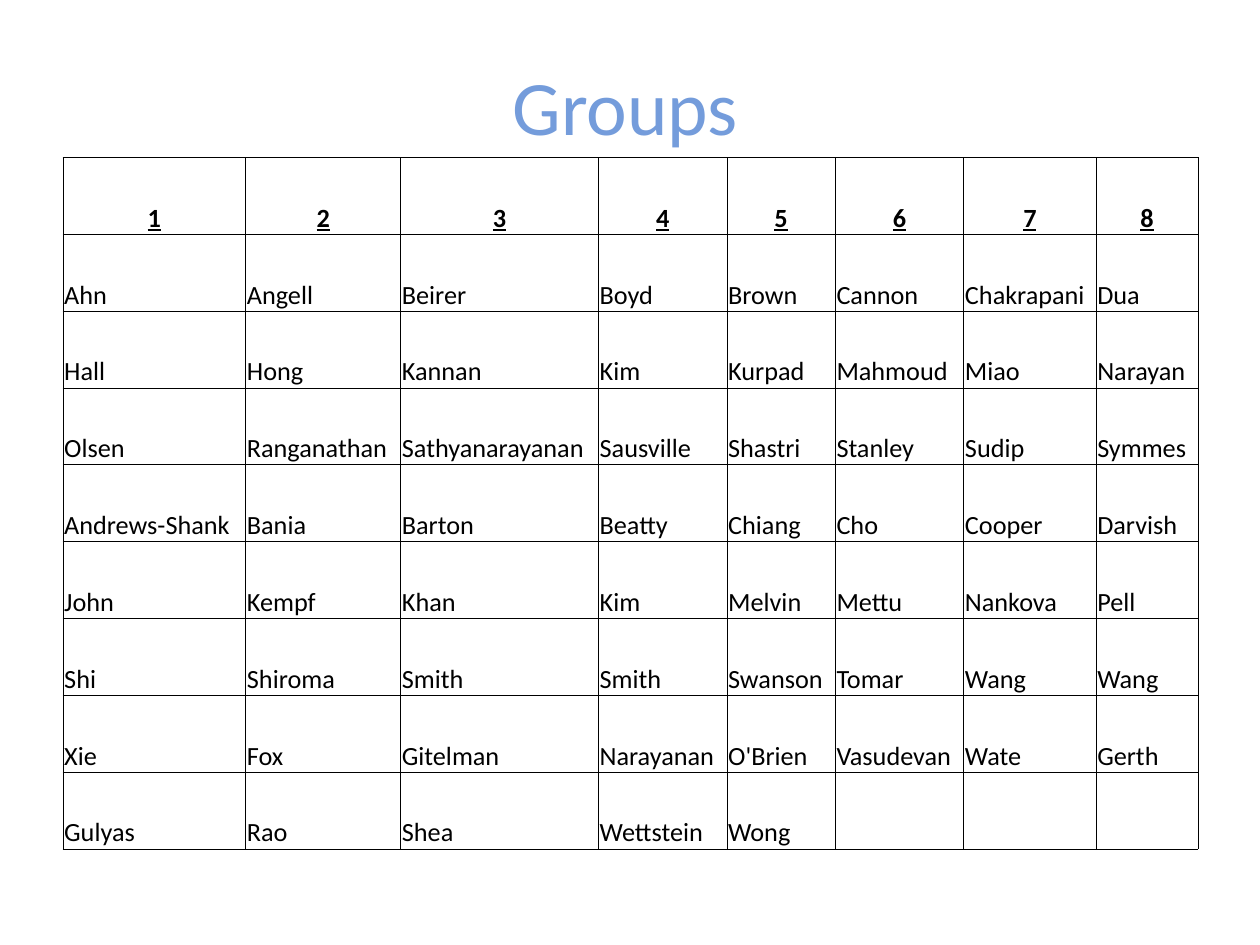
from lxml.etree import SubElement as Sub
from pptx import Presentation as Deck
from pptx.dml.color import RGBColor as RGB
from pptx.enum.text import MSO_ANCHOR as Anchor, PP_ALIGN as Align
from pptx.oxml.ns import qn
from pptx.util import Inches, Pt

HUES = {"title": "749CDB", "ink": "000000", "paper": "FFFFFF"}
WIDTHS = [1.45, 1.23, 1.57, 1.02, 0.86, 1.02, 1.05, 0.81]
HEIGHT = 0.61
FILLED = 12
NAMES = """1 2 3 4 5 6 7 8
Ahn Angell Beirer Boyd Brown Cannon Chakrapani Dua
Hall Hong Kannan Kim Kurpad Mahmoud Miao Narayan
Olsen Ranganathan Sathyanarayanan Sausville Shastri Stanley Sudip Symmes
Andrews-Shank Bania Barton Beatty Chiang Cho Cooper Darvish
John Kempf Khan Kim Melvin Mettu Nankova Pell
Shi Shiroma Smith Smith Swanson Tomar Wang Wang
Xie Fox Gitelman Narayanan O'Brien Vasudevan Wate Gerth
Gulyas Rao Shea Wettstein Wong"""


def write(frame, text, size, hue, font="Calibri", align=Align.LEFT, bold=False, line=False):
    para = frame.paragraphs[0]
    para.alignment = align
    run = para.add_run()
    run.text = text
    run.font.name = font
    run.font.size = Pt(size)
    run.font.bold = bold
    run.font.underline = line
    run.font.color.rgb = RGB.from_string(HUES[hue])


class Page:
    def __init__(self, slide, font="Calibri"):
        self.slide = slide
        self.font = font

    def title(self, text, left, top, width, height):
        box = self.slide.shapes.add_textbox(
            Inches(left), Inches(top), Inches(width), Inches(height))
        frame = box.text_frame
        frame.word_wrap = True
        frame.vertical_anchor = Anchor.MIDDLE
        frame.margin_left = Inches(0.63)
        write(frame, text, 44, "title", self.font, Align.CENTER)

    def border(self, cell):
        props = cell._tc.get_or_add_tcPr()
        for side in ("lnL", "lnR", "lnT", "lnB"):
            edge = Sub(props, qn(f"a:{side}"), w=str(Pt(0.5)))
            fill = Sub(edge, qn("a:solidFill"))
            Sub(fill, qn("a:srgbClr"), val=HUES["ink"])

    def cell(self, cell, text, head, filled):
        cell.vertical_anchor = Anchor.BOTTOM
        cell.margin_left = cell.margin_right = cell.margin_top = Inches(0.01)
        cell.margin_bottom = 0
        self.border(cell)
        if filled:
            cell.fill.solid()
            cell.fill.fore_color.rgb = RGB.from_string(HUES["paper"])
        else:
            cell.fill.background()
        if text:
            align = Align.CENTER if head else Align.LEFT
            write(cell.text_frame, text, 15, "ink", self.font, align, head, head)

    def table(self, rows, left, top):
        count = len(WIDTHS)
        grid = self.slide.shapes.add_table(
            len(rows), count, Inches(left), Inches(top),
            Inches(sum(WIDTHS)), Inches(HEIGHT * len(rows))).table
        grid.first_row = grid.horz_banding = False
        for col, width in zip(grid.columns, WIDTHS):
            col.width = Inches(width)
        for r, names in enumerate(rows):
            grid.rows[r].height = Inches(HEIGHT)
            for c in range(count):
                text = names[c] if c < len(names) else ""
                self.cell(grid.cell(r, c), text, r == 0, r * count + c < FILLED)


def main():
    deck = Deck()
    deck.slide_width, deck.slide_height = Inches(10), Inches(7.5)
    page = Page(deck.slides.add_slide(deck.slide_layouts[6]))
    page.title("Groups", 0, 0.25, 9.4, 1.17)
    page.table([line.split() for line in NAMES.splitlines()], 0.5, 1.25)
    deck.save("out.pptx")


if __name__ == "__main__":
    main()
